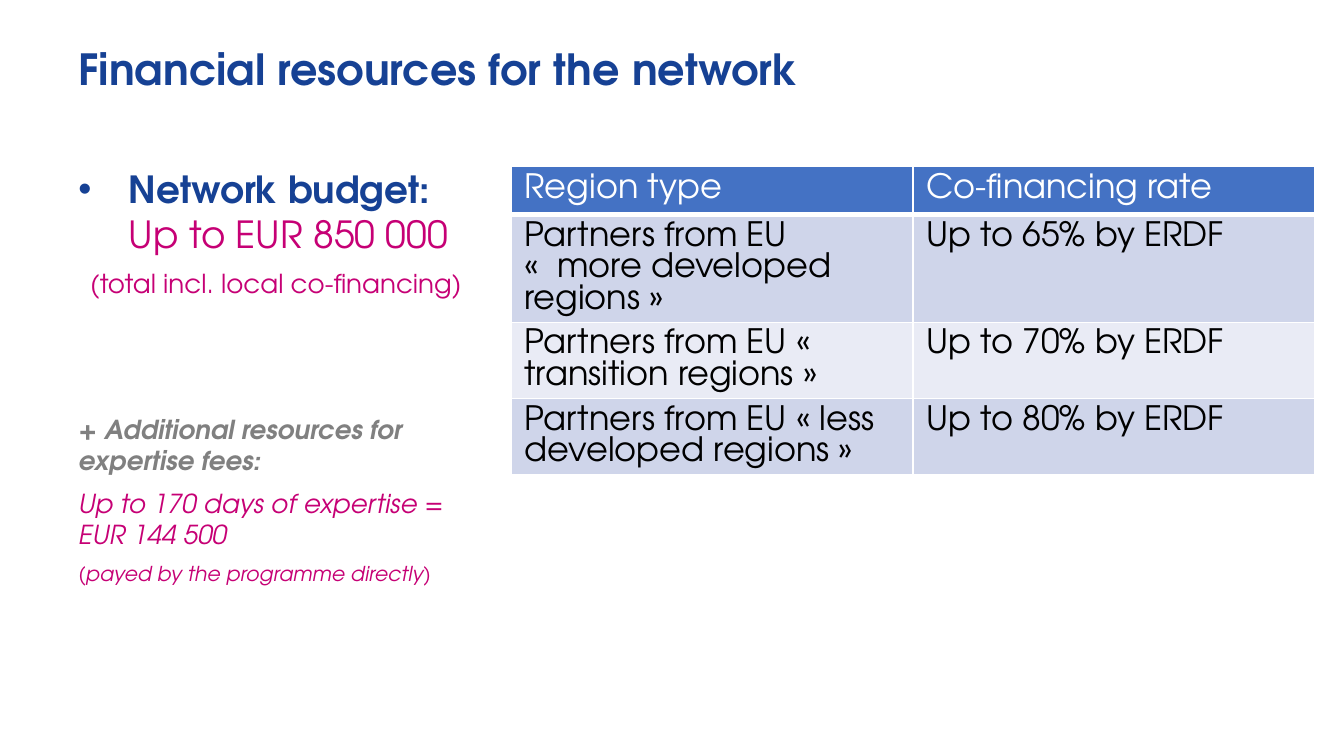
from dataclasses import dataclass

from lxml import etree
from pptx import Presentation
from pptx import util as u
from pptx.dml.color import RGBColor
from pptx.enum import text
from pptx.oxml import ns


@dataclass(frozen=True)
class Theme:
    font: str = "TeX Gyre Adventor"
    blue: str = "164194"
    pink: str = "C60075"
    grey: str = "808080"
    white: str = "FFFFFF"
    black: str = "000000"
    header: str = "4472C4"
    bands: tuple = ("CFD5EA", "E9EBF5")
    title: int = 23
    lead: int = 20
    cell: int = 18
    body: int = 14
    small: int = 11


T = Theme()
NBSP = chr(160)

ROWS = [
    ("Region type", "Co-financing rate"),
    (f"Partners from EU «{NBSP}{NBSP}more developed regions{NBSP}»", "Up to 65% by ERDF"),
    (f"Partners from EU « transition{NBSP}regions{NBSP}»", "Up to 70% by ERDF"),
    (f"Partners from EU «{NBSP}less developed regions{NBSP}»", "Up to 80% by ERDF"),
]


def style(r, size, color, bold=False, italic=False):
    f = r.font
    f.name, f.size, f.bold, f.italic = T.font, u.Pt(size), bold, italic
    f.color.rgb = RGBColor.from_string(color)


def add_run(p, words, *look):
    r = p.add_run()
    r.text = words
    style(r, *look)


def clear_margins(tf):
    tf.margin_left = tf.margin_right = tf.margin_top = tf.margin_bottom = 0
    tf.word_wrap = True
    tf.auto_size = text.MSO_AUTO_SIZE.NONE


def add_bullet(p, indent):
    pPr = p._p.get_or_add_pPr()
    pPr.set("marL", str(indent))
    pPr.set("indent", str(-indent))
    etree.SubElement(pPr, ns.qn("a:buFont"), typeface="Arial")
    etree.SubElement(pPr, ns.qn("a:buChar"), char="•")


def add_title(s, words):
    sp = s.shapes.title
    sp.left, sp.top, sp.width, sp.height = u.Cm(1.48), u.Cm(0.76), u.Cm(22.89), u.Cm(1.19)
    tf = sp.text_frame
    clear_margins(tf)
    tf.vertical_anchor = text.MSO_ANCHOR.MIDDLE
    tf.text = words
    p = tf.paragraphs[0]
    p.alignment = text.PP_ALIGN.LEFT
    p.line_spacing = 0.9
    style(p.runs[0], T.title, T.blue, True)


def add_budget(s):
    tf = s.shapes.add_textbox(u.Cm(1.48), u.Cm(3.15), u.Cm(7.34), u.Cm(9.09)).text_frame
    clear_margins(tf)
    p = tf.paragraphs[0]
    add_bullet(p, u.Cm(0.95))
    add_run(p, "Network budget: ", T.lead, T.blue, True)
    add_run(p, "Up to EUR 850 000", T.lead, T.pink)
    notes = [
        (" (total incl. local co-financing)", 6, T.body, T.pink),
        ("+ Additional resources for expertise fees:", 61.4, T.body, T.grey, True, True),
        ("Up to 170 days of expertise = EUR 144 500", 6, T.body, T.pink, False, True),
        ("(payed by the programme directly)", 6, T.small, T.pink, False, True),
    ]
    for words, gap, *look in notes:
        p = tf.add_paragraph()
        p.space_before = u.Pt(gap)
        add_run(p, words, *look)
    tf.paragraphs[1].alignment = text.PP_ALIGN.CENTER


def add_borders(cell, row):
    tcPr = cell._tc.get_or_add_tcPr()
    widths = {"L": 1, "R": 1, "T": 3 if row == 1 else 1, "B": 3 if row == 0 else 1}
    for side, width in widths.items():
        ln = etree.SubElement(tcPr, ns.qn(f"a:ln{side}"), w=str(u.Pt(width)))
        fill = etree.SubElement(ln, ns.qn("a:solidFill"))
        etree.SubElement(fill, ns.qn("a:srgbClr"), val=T.white)


def fill_cell(cell, words, row):
    add_borders(cell, row)
    cell.fill.solid()
    color = T.bands[(row - 1) % 2] if row else T.header
    cell.fill.fore_color.rgb = RGBColor.from_string(color)
    cell.text = words
    style(cell.text_frame.paragraphs[0].runs[0], T.cell, T.black if row else T.white)


def add_rates(s):
    table = s.shapes.add_table(len(ROWS), 2, u.Cm(9.66), u.Cm(3.15), u.Cm(15.18), u.Cm(5.1)).table
    for i, words in enumerate(ROWS):
        table.rows[i].height = u.Cm(1.3 if i else 0.91)
        for j, value in enumerate(words):
            fill_cell(table.cell(i, j), value, i)


def main():
    prs = Presentation()
    prs.slide_width, prs.slide_height = u.Cm(25.4), u.Cm(14.29)
    s = prs.slides.add_slide(prs.slide_layouts[5])
    add_title(s, "Financial resources for the network")
    add_budget(s)
    add_rates(s)
    prs.save("out.pptx")


if __name__ == "__main__":
    main()
